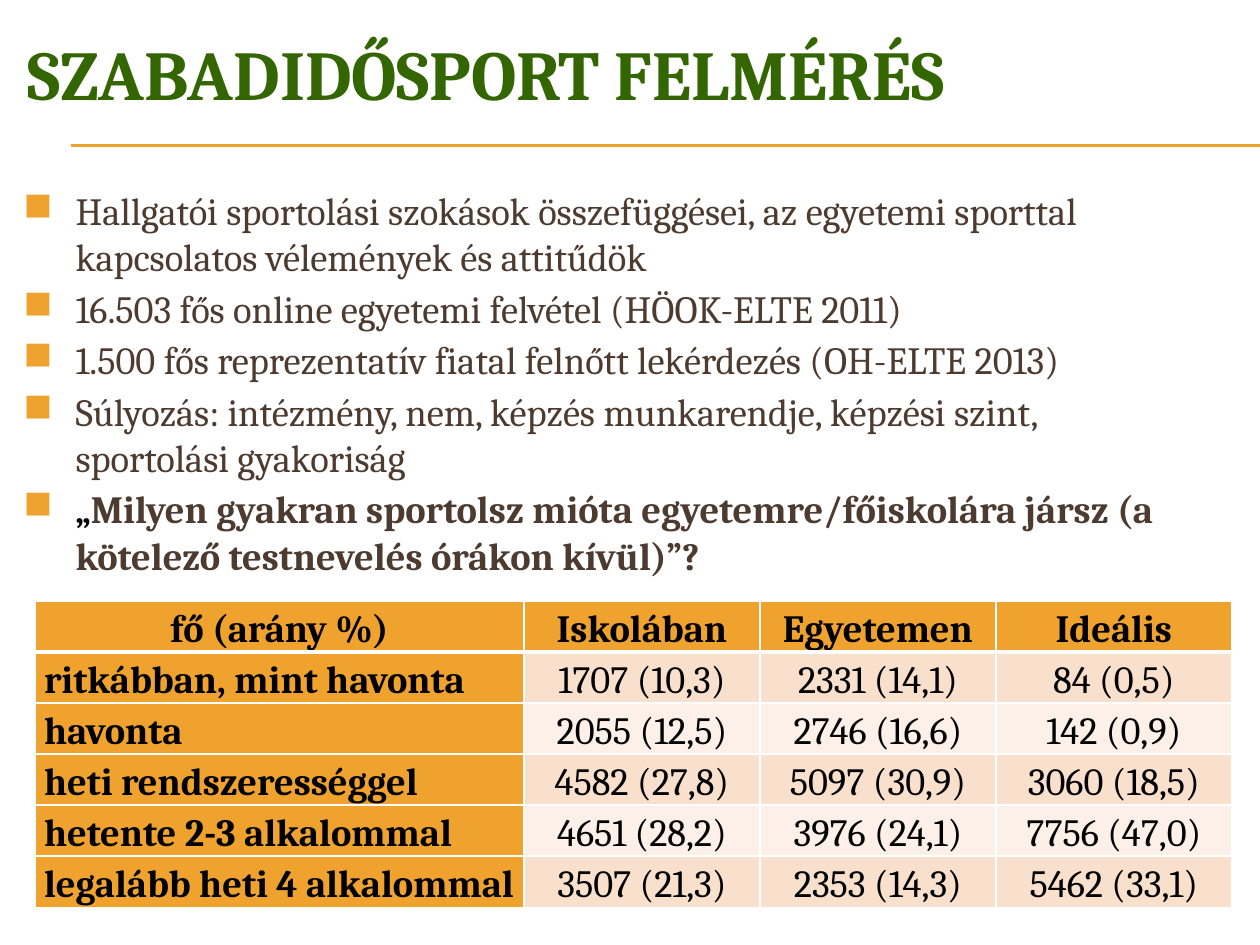
from lxml import etree
from pptx import Presentation
from pptx import util as u
from pptx.dml.color import RGBColor
from pptx.enum import shapes, text
from pptx.oxml import ns

# Content
TITLE = "SZABADIDŐSPORT FELMÉRÉS"
# Each bullet is a list of runs: (text, colour name, bold)
BULLETS = [
    [("Hallgatói sportolási szokások összefüggései, az egyetemi sporttal "
      "kapcsolatos vélemények és attitűdök", "brown", False)],
    [("16.503 fős online egyetemi felvétel (HÖOK-ELTE 2011)", "brown", False)],
    [("1.500 fős reprezentatív fiatal felnőtt lekérdezés (OH-ELTE 2013)", "brown", False)],
    [("Súlyozás: intézmény, nem, képzés munkarendje, képzési szint, \t"
      "sportolási gyakoriság", "brown", False)],
    [("„", "black", True),
     ("Milyen gyakran sportolsz mióta egyetemre/főiskolára jársz "
      "(a kötelező testnevelés órákon kívül)”?", "brown", True)],
]
TABLE = [
    ("fő (arány %)", "Iskolában", "Egyetemen", "Ideális"),
    ("ritkábban, mint havonta", "1707 (10,3)", "2331 (14,1)", "84 (0,5)"),
    ("havonta", "2055 (12,5)", "2746 (16,6)", "142 (0,9)"),
    ("heti rendszerességgel", "4582 (27,8)", "5097 (30,9)", "3060 (18,5)"),
    ("hetente 2-3 alkalommal", "4651 (28,2)", "3976 (24,1)", "7756 (47,0)"),
    ("legalább heti 4 alkalommal", "3507 (21,3)", "2353 (14,3)", "5462 (33,1)"),
]

THEME = {
    "font": "Cambria", "title_size": 40, "text_size": 22,
    "green": "336600", "brown": "4E3B30", "black": "000000", "white": "FFFFFF",
    "orange": "F0A22E", "bands": ("F9E0CD", "FCF0E8"),
}

# Layout in px
SLIDE = (1260, 945)
TITLE_BOX = (15, 16, 1062, 114)
BODY_BOX = (15, 181, 1216, 401)
RULE_LEFT, RULE_TOPS = 71, (145, 146)
TABLE_LEFT, TABLE_TOP, ROW_HEIGHT = 35, 601, 51
COLUMNS = (489, 236, 236, 236)
INDENT, CELL_MARGIN = 48, 9


def px(value):
    return u.Emu(round(value * 914400 / 126))


def color(value):
    return RGBColor.from_string(value)


def place(shape, box):
    shape.left, shape.top, shape.width, shape.height = map(px, box)


def add_run(paragraph, words, size, value, bold):
    run = paragraph.add_run()
    run.text = words
    font = run.font
    font.name, font.size, font.bold = THEME["font"], u.Pt(size), bold
    font.color.rgb = color(value)


def add_element(parent, tag, **attributes):
    return etree.SubElement(parent, ns.qn(tag), attributes)


def set_bullet(paragraph):
    properties = paragraph._p.get_or_add_pPr()
    properties.set("marL", str(px(INDENT)))
    properties.set("indent", str(-px(INDENT)))
    add_element(add_element(properties, "a:buClr"), "a:srgbClr", val=THEME["orange"])
    add_element(properties, "a:buSzPct", val="70000")
    add_element(properties, "a:buFont", typeface="Wingdings 2")
    add_element(properties, "a:buChar", char="➢")


def set_borders(cell, widths):
    properties = cell._tc.get_or_add_tcPr()
    for side, width in widths.items():
        line = add_element(properties, f"a:ln{side}", w=str(u.Pt(width)))
        add_element(add_element(line, "a:solidFill"), "a:srgbClr", val=THEME["white"])


def add_rules(slide):
    for top in RULE_TOPS:
        rule = slide.shapes.add_connector(
            shapes.MSO_CONNECTOR.STRAIGHT, px(RULE_LEFT), px(top), px(SLIDE[0]), px(top))
        rule.line.color.rgb = color(THEME["orange"])
        rule.line.width = u.Pt(0.75)
        add_element(rule._element.spPr, "a:effectLst")


def fill_title(title):
    place(title, TITLE_BOX)
    frame = title.text_frame
    frame.auto_size = text.MSO_AUTO_SIZE.NONE
    frame.vertical_anchor = text.MSO_ANCHOR.MIDDLE
    paragraph = frame.paragraphs[0]
    paragraph.alignment = text.PP_ALIGN.LEFT
    add_run(paragraph, TITLE, THEME["title_size"], THEME["green"], True)


def fill_body(body):
    place(body, BODY_BOX)
    frame = body.text_frame
    frame.auto_size = text.MSO_AUTO_SIZE.NONE
    for index, runs in enumerate(BULLETS):
        paragraph = frame.add_paragraph() if index else frame.paragraphs[0]
        paragraph.space_before = u.Pt(3)
        set_bullet(paragraph)
        for words, name, bold in runs:
            add_run(paragraph, words, THEME["text_size"], THEME[name], bold)


def add_survey_table(slide):
    frame = slide.shapes.add_table(
        len(TABLE), len(COLUMNS), px(TABLE_LEFT), px(TABLE_TOP),
        px(sum(COLUMNS)), px(ROW_HEIGHT * len(TABLE)))
    table = frame.table
    for column, width in zip(table.columns, COLUMNS):
        column.width = px(width)
    for r, values in enumerate(TABLE):
        table.rows[r].height = px(ROW_HEIGHT)
        for c, value in enumerate(values):
            cell = table.cell(r, c)
            heading = r == 0 or c == 0
            cell.margin_left = cell.margin_right = px(CELL_MARGIN)
            cell.margin_top = cell.margin_bottom = 0
            set_borders(cell, {"L": 1, "R": 1, "T": 3 if r == 1 else 1,
                               "B": 3 if r == 0 else 1})
            cell.fill.solid()
            cell.fill.fore_color.rgb = color(
                THEME["orange"] if heading else THEME["bands"][(r - 1) % 2])
            paragraph = cell.text_frame.paragraphs[0]
            paragraph.line_spacing = 1.15
            paragraph.alignment = (text.PP_ALIGN.JUSTIFY if r and c == 0
                                   else text.PP_ALIGN.CENTER)
            add_run(paragraph, value, THEME["text_size"], THEME["black"], heading)


def main():
    presentation = Presentation()
    presentation.slide_width, presentation.slide_height = map(px, SLIDE)
    slide = presentation.slides.add_slide(presentation.slide_layouts[1])
    add_rules(slide)
    fill_body(slide.placeholders[1])
    fill_title(slide.shapes.title)
    add_survey_table(slide)
    presentation.save("out.pptx")


if __name__ == "__main__":
    main()
